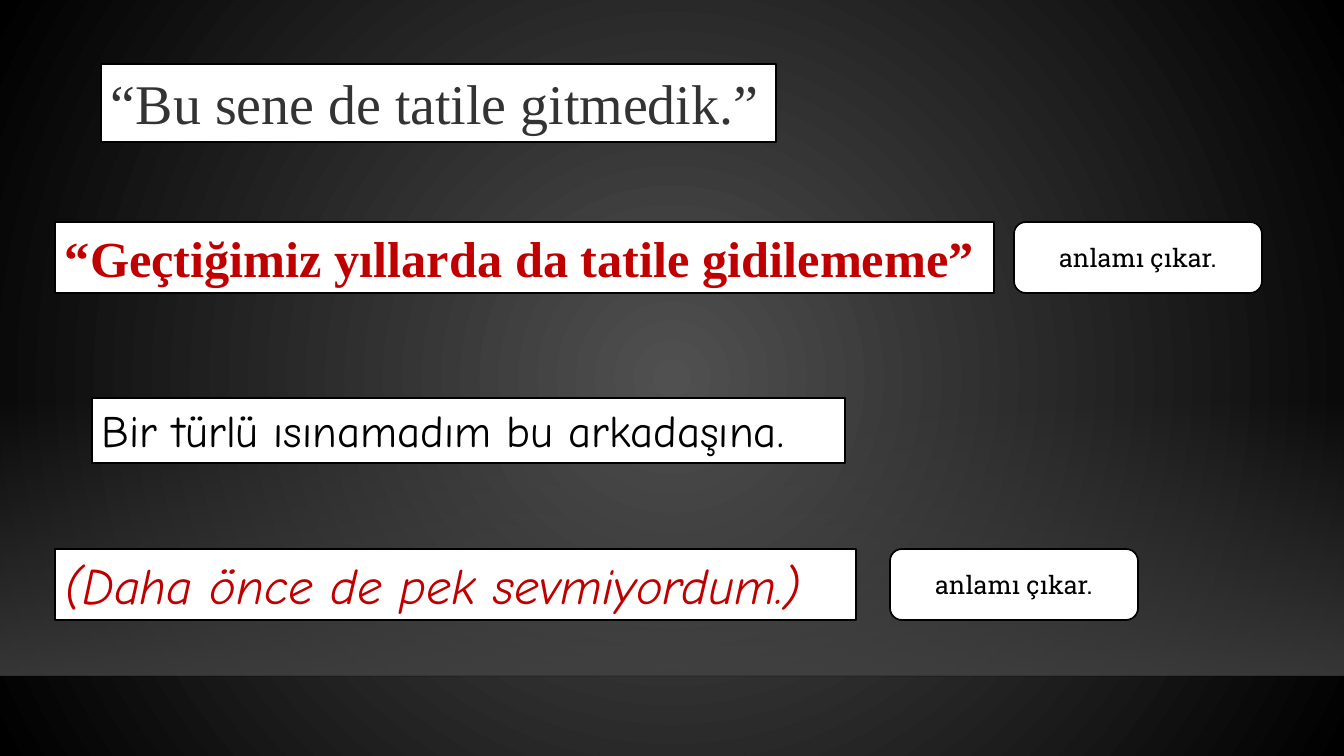
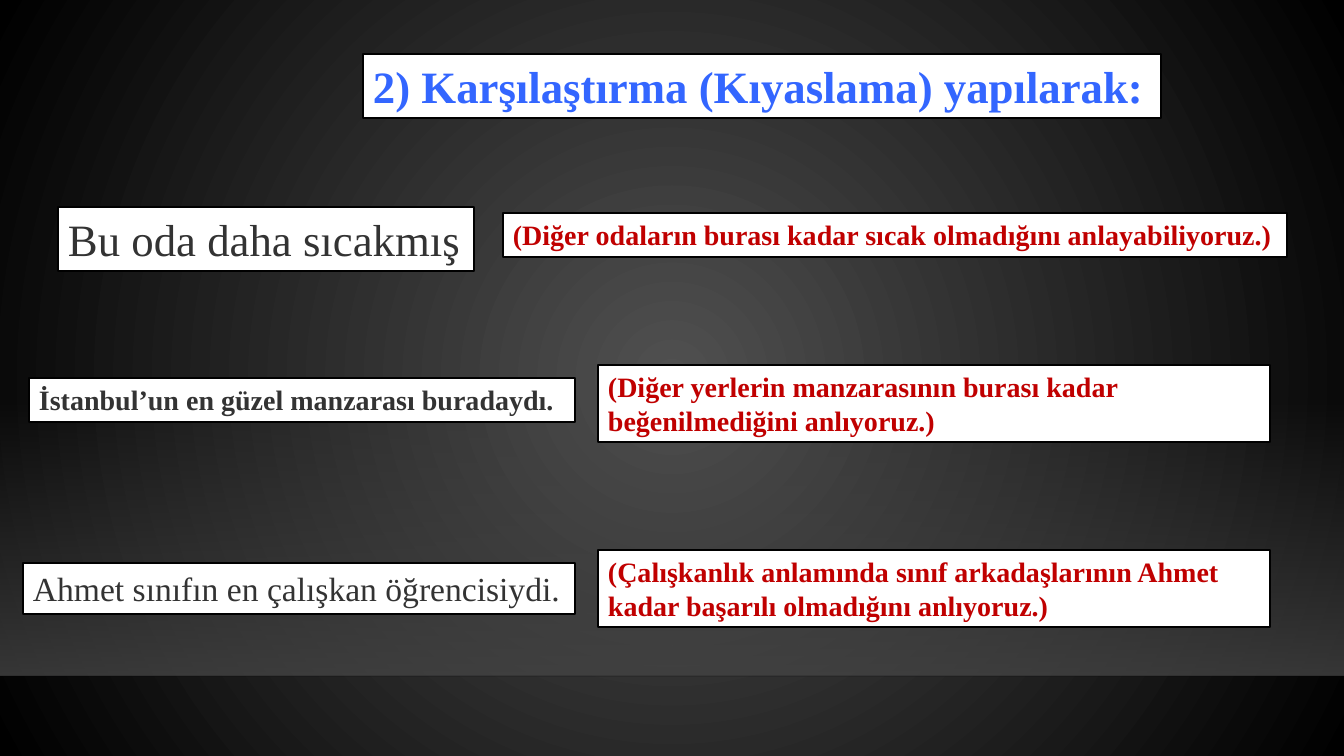
"""Builds two slides of Turkish example sentences and the meanings they imply."""
from dataclasses import dataclass

import pptx
import pptx.dml.color
import pptx.enum.shapes
import pptx.enum.text
import pptx.oxml
import pptx.oxml.ns
import pptx.presentation
import pptx.slide
import pptx.util
from lxml import etree

RGBColor = pptx.dml.color.RGBColor
SLIDE_WIDTH, SLIDE_HEIGHT = 1344, 756
EMU_PER_PX = 12192000 / SLIDE_WIDTH
BAND_TOP, BAND_BOTTOM = 399, 676

WHITE = RGBColor(0xFF, 0xFF, 0xFF)
BLACK = RGBColor(0x00, 0x00, 0x00)
CHARCOAL = RGBColor(0x33, 0x33, 0x33)
RED = RGBColor(0xC0, 0x00, 0x00)
BLUE = RGBColor(0x33, 0x66, 0xFF)
GLOW = RGBColor(0x50, 0x50, 0x50)
BAND = RGBColor(0x45, 0x45, 0x45)
EDGE = RGBColor(0x00, 0x00, 0x01)

SERIF = "Times New Roman"
HAND = "Comic Neue"
SLAB = "Roboto Slab"


@dataclass(frozen=True)
class Caption:
    text: str
    left: int
    top: int
    width: int
    height: int
    size: int
    color: RGBColor
    font: str = SERIF
    bold: bool = False
    italic: bool = False
    wrap: bool = False
    badge: bool = False


def badge(left: int, top: int) -> Caption:
    return Caption("anlamı çıkar.", left, top, 248, 71, 18, BLACK, SLAB, wrap=True, badge=True)


def meaning(text: str, top: int) -> Caption:
    return Caption(text, 598, top, 672, 77, 20, RED, bold=True, wrap=True)


SLIDES = [
    [
        Caption("“Bu sene de tatile gitmedik.”", 101, 64, 675, 78, 40, CHARCOAL),
        Caption("“Geçtiğimiz yıllarda da tatile gidilememe”", 55, 222, 939, 71, 36, RED, bold=True),
        badge(1014, 222),
        Caption("Bir türlü ısınamadım bu arkadaşına.", 92, 398, 753, 65, 32, BLACK, HAND),
        Caption("(Daha önce de pek sevmiyordum.)", 55, 549, 801, 71, 36, RED, HAND, italic=True),
        badge(890, 549),
    ],
    [
        Caption("2) Karşılaştırma (Kıyaslama) yapılarak:", 363, 54, 798, 64, 32, BLUE, bold=True),
        Caption("Bu oda daha sıcakmış", 58, 207, 416, 64, 32, CHARCOAL),
        Caption("(Diğer odaların burası kadar sıcak olmadığını anlayabiliyoruz.)",
                503, 213, 784, 44, 20, RED, bold=True),
        Caption("İstanbul’un en güzel manzarası buradaydı. ",
                29, 378, 546, 44, 20, CHARCOAL, bold=True),
        meaning("(Diğer yerlerin manzarasının burası kadar beğenilmediğini anlıyoruz.)", 365),
        Caption("Ahmet sınıfın en çalışkan öğrencisiydi.", 23, 563, 552, 51, 24, CHARCOAL),
        meaning("(Çalışkanlık anlamında sınıf arkadaşlarının Ahmet kadar başarılı olmadığını anlıyoruz.)",
                550),
    ],
]


def px(value: int) -> pptx.util.Emu:
    return pptx.util.Emu(round(value * EMU_PER_PX))


def set_alpha(color_element: etree.ElementBase, percent: int) -> None:
    alpha = etree.SubElement(color_element, pptx.oxml.ns.qn("a:alpha"))
    alpha.set("val", str(percent * 1000))


def set_gradient(fill: pptx.dml.fill.FillFormat, start: RGBColor, end: RGBColor) -> None:
    fill.gradient()
    for stop, color in zip(fill.gradient_stops, (start, end)):
        stop.color.rgb = color


def paint_background(master: pptx.slide.SlideMaster) -> None:
    set_gradient(master.background.fill, GLOW, BLACK)
    linear = master.element.xpath(".//p:bg//a:lin")[0]
    circle = pptx.oxml.parse_xml(
        f'<a:path {pptx.oxml.ns.nsdecls("a")} path="circle">'
        '<a:fillToRect l="50000" t="50000" r="50000" b="50000"/></a:path>'
    )
    linear.getparent().replace(linear, circle)


def add_floor(master: pptx.slide.SlideMaster, slide: pptx.slide.Slide) -> None:
    band = slide.shapes.add_shape(
        pptx.enum.shapes.MSO_SHAPE.RECTANGLE,
        0, px(BAND_TOP), px(SLIDE_WIDTH), px(BAND_BOTTOM - BAND_TOP),
    )
    band.shadow.inherit = False
    band.line.fill.background()
    set_gradient(band.fill, BAND, BAND)
    band.fill.gradient_angle = 270
    for color_element, percent in zip(band.element.xpath(".//a:gs/a:srgbClr"), (0, 80)):
        set_alpha(color_element, percent)

    edge = slide.shapes.add_connector(
        pptx.enum.shapes.MSO_CONNECTOR.STRAIGHT,
        0, px(BAND_BOTTOM), px(SLIDE_WIDTH), px(BAND_BOTTOM),
    )
    edge.line.color.rgb = EDGE
    edge.line.width = pptx.util.Pt(1)
    set_alpha(edge.element.xpath(".//a:ln//a:srgbClr")[0], 20)
    etree.SubElement(edge.element.spPr, pptx.oxml.ns.qn("a:effectLst"))

    for number, shape in enumerate((band, edge), start=101):
        shape.element.xpath(".//p:cNvPr")[0].set("id", str(number))
        master.shapes.element.append(shape.element)


def add_caption(slide: pptx.slide.Slide, caption: Caption) -> None:
    bounds = [px(n) for n in (caption.left, caption.top, caption.width, caption.height)]
    if caption.badge:
        shape = slide.shapes.add_shape(pptx.enum.shapes.MSO_SHAPE.ROUNDED_RECTANGLE, *bounds)
        shape.shadow.inherit = False
    else:
        shape = slide.shapes.add_textbox(*bounds)
    shape.fill.solid()
    shape.fill.fore_color.rgb = WHITE
    shape.line.color.rgb = BLACK
    shape.line.width = pptx.util.Pt(1.25)

    frame = shape.text_frame
    frame.word_wrap = caption.wrap
    paragraph = frame.paragraphs[0]
    paragraph.text = caption.text
    if caption.badge:
        frame.vertical_anchor = pptx.enum.text.MSO_ANCHOR.MIDDLE
        paragraph.alignment = pptx.enum.text.PP_ALIGN.CENTER
    else:
        frame.auto_size = pptx.enum.text.MSO_AUTO_SIZE.SHAPE_TO_FIT_TEXT
    font = paragraph.font
    font.name = caption.font
    font.size = pptx.util.Pt(caption.size)
    font.bold = caption.bold
    font.italic = caption.italic
    font.color.rgb = caption.color


def main() -> None:
    presentation = pptx.Presentation()
    presentation.slide_width = px(SLIDE_WIDTH)
    presentation.slide_height = px(SLIDE_HEIGHT)
    master = presentation.slide_master
    paint_background(master)
    blank = presentation.slide_layouts[6]
    slides = [presentation.slides.add_slide(blank) for _ in SLIDES]
    add_floor(master, slides[0])
    for slide, captions in zip(slides, SLIDES):
        for caption in captions:
            add_caption(slide, caption)
    presentation.save("out.pptx")


if __name__ == "__main__":
    main()
